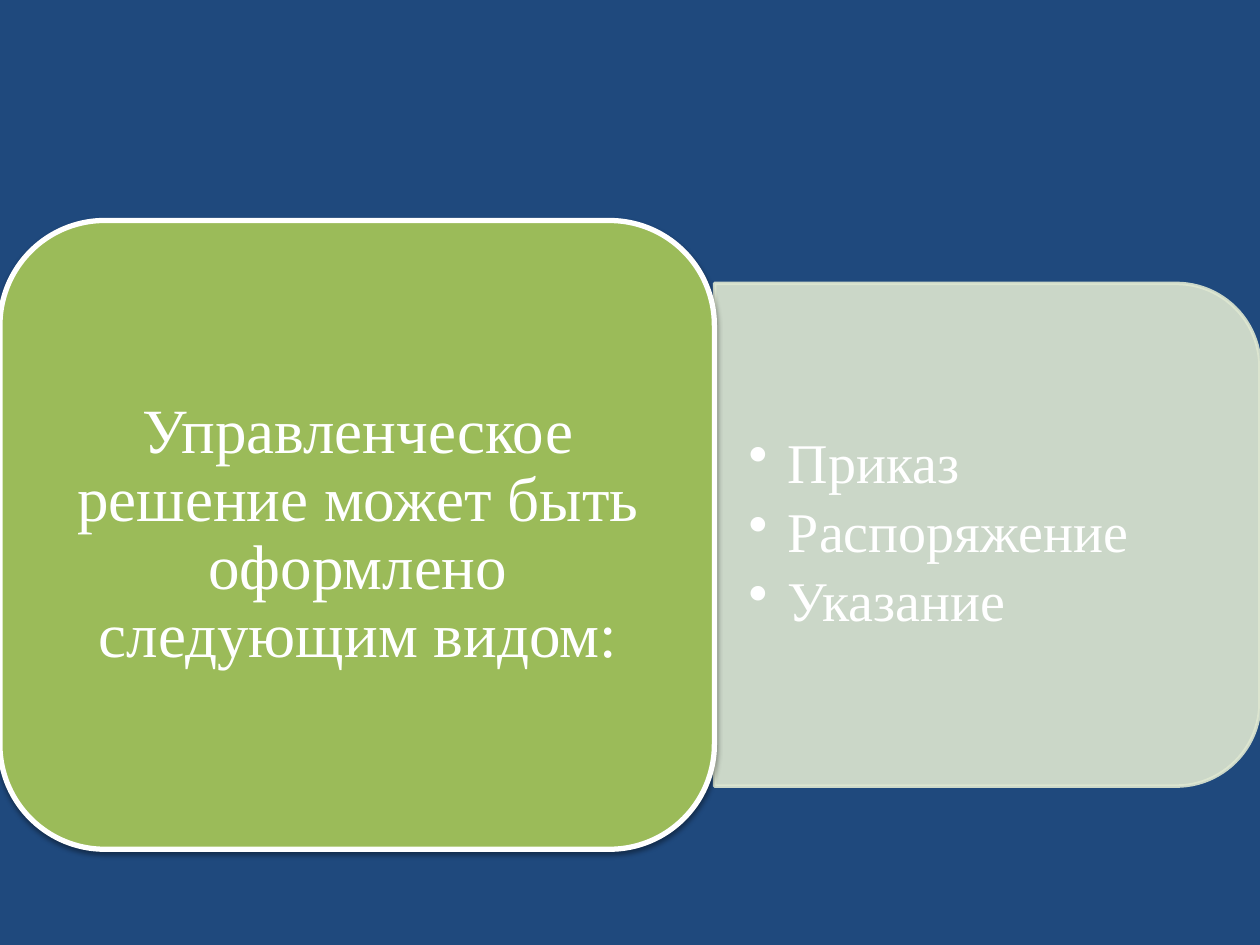
from lxml import etree
from pptx import Presentation
from pptx.dml.color import RGBColor
from pptx.enum.shapes import MSO_SHAPE
from pptx.enum.text import MSO_ANCHOR, PP_ALIGN
from pptx.oxml.ns import qn
from pptx.util import Pt

ROUND_RECT = MSO_SHAPE.ROUNDED_RECTANGLE
ROUND_TOP = MSO_SHAPE.ROUND_2_SAME_RECTANGLE
MIDDLE = MSO_ANCHOR.MIDDLE
CENTER, LEFT = PP_ALIGN.CENTER, PP_ALIGN.LEFT

NAVY = RGBColor(0x1F, 0x49, 0x7D)
GREEN = RGBColor(0x9B, 0xBB, 0x59)
PALE_GREEN = RGBColor(0xDE, 0xE7, 0xD1)
WHITE = RGBColor(0xFF, 0xFF, 0xFF)
FONT = "Times New Roman"


def add_panel(kind, x, y, w, h, fill, line, weight):
    sp = s.shapes.add_shape(kind, Pt(x), Pt(y), Pt(w), Pt(h))
    sp.shadow.inherit = False
    sp.fill.solid()
    sp.fill.fore_color.rgb = fill
    sp.line.color.rgb = line
    sp.line.width = Pt(weight)
    return sp


def add_text(x, y, w, h, inset_x, inset_y, lines, size, align, after):
    tf = s.shapes.add_textbox(Pt(x), Pt(y), Pt(w), Pt(h)).text_frame
    tf.word_wrap = True
    tf.vertical_anchor = MIDDLE
    tf.margin_left = tf.margin_right = Pt(inset_x)
    tf.margin_top = tf.margin_bottom = Pt(inset_y)
    tf.text = "\n".join(lines)
    for p in tf.paragraphs:
        p.alignment = align
        p.line_spacing = 0.9
        p.space_after = Pt(after)
        f = p.runs[0].font
        f.name, f.size, f.color.rgb = FONT, Pt(size), WHITE
    return tf


prs = Presentation()
prs.slide_width, prs.slide_height = Pt(720), Pt(540)
s = prs.slides.add_slide(prs.slide_layouts[6])
s.background.fill.solid()
s.background.fill.fore_color.rgb = NAVY

# Right panel: turned so that its rounded corners face right, 10% transparent
sp = add_panel(ROUND_TOP, 420.5, 149.75, 287.3, 311.7, PALE_GREEN, PALE_GREEN, 2)
sp.rotation = 90
for clr in sp._element.spPr.iter(qn("a:srgbClr")):
    etree.SubElement(clr, qn("a:alpha"), val="90000")

# Bulleted list of document forms
tf = add_text(408.25, 175.7, 297.4, 259.2, 19.5, 10,
              ["Приказ", "Распоряжение", "Указание"], 32, LEFT, 5)
for p in tf.paragraphs:
    pPr = p._p.get_or_add_pPr()
    pPr.set("marL", str(Pt(22.5)))
    pPr.set("indent", str(Pt(-22.5)))
    etree.SubElement(pPr, qn("a:buChar"), char="•")

# Left panel with a soft shadow below
sp = add_panel(ROUND_RECT, 0, 126, 408.25, 359.3, GREEN, WHITE, 3)
effects = sp._element.spPr.find(qn("a:effectLst"))
shadow = etree.SubElement(effects, qn("a:outerShdw"), blurRad=str(Pt(3.1)),
                          dist=str(Pt(1.6)), dir="5400000", rotWithShape="0")
clr = etree.SubElement(shadow, qn("a:srgbClr"), val="000000")
etree.SubElement(clr, qn("a:alpha"), val="38000")

# Heading statement
add_text(18, 143.3, 373, 324.7, 10.8, 5,
         ["Управленческое решение может быть оформлено следующим видом:"],
         36, CENTER, 0)

prs.save("out.pptx")
